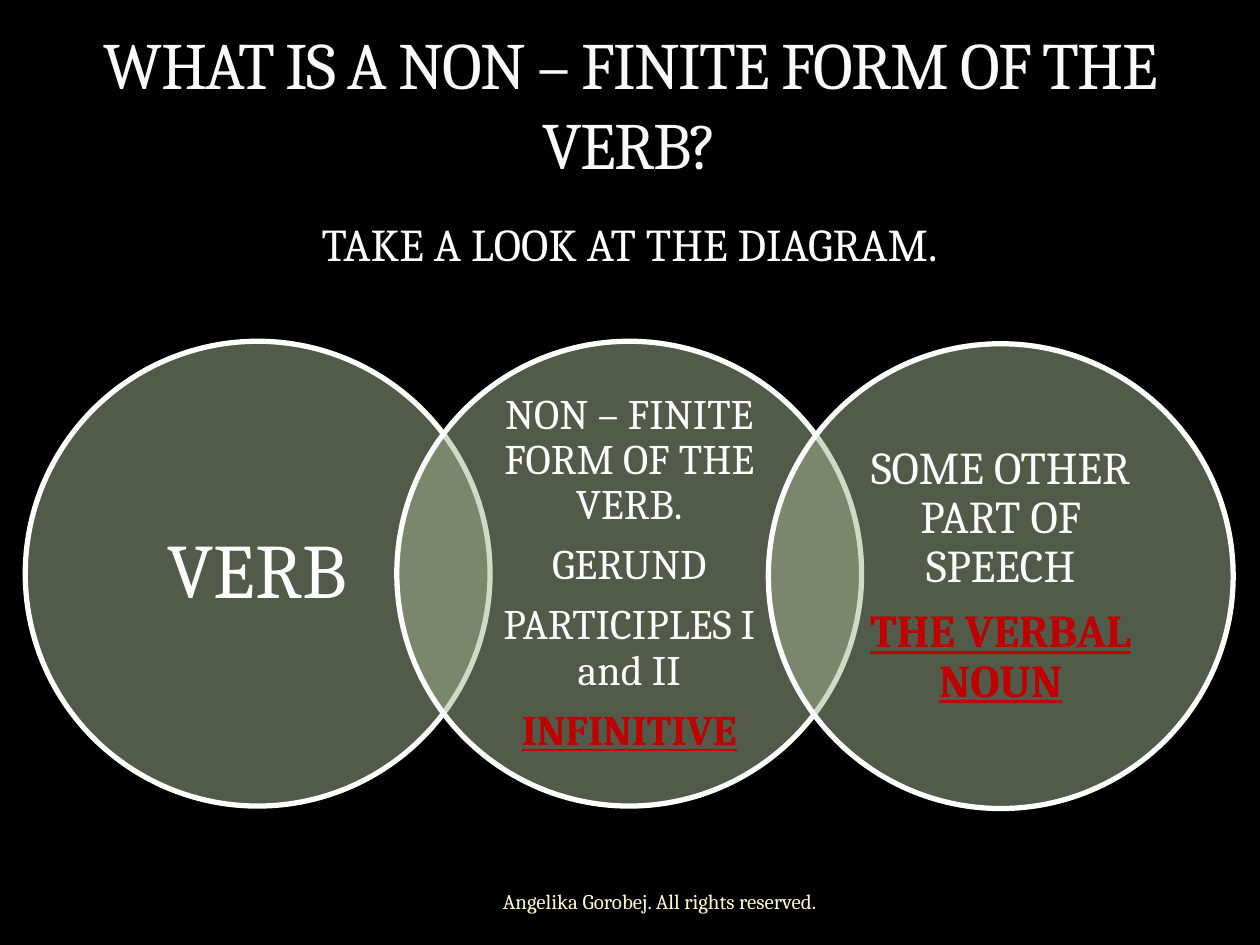
from lxml.etree import SubElement
from pptx import Presentation
from pptx.dml.color import RGBColor
from pptx.enum.shapes import MSO_SHAPE as Preset
from pptx.enum.text import MSO_ANCHOR as Anchor, MSO_AUTO_SIZE as AutoSize, PP_ALIGN as Align
from pptx.oxml.ns import qn
from pptx.util import Cm, Pt

FACE = "Cambria"
WHITE, CREAM, RED, OLIVE = "FFFFFF", "FEFAC9", "C00000", "A5B592"
EMPHASIS = {"bold": True, "underline": True}
DIAMETER, STEP = 9.37, 7.49
CIRCLES = [
    {"top": 6.88, "size": 44, "padding": 0.15, "lines": ["VERB"], "highlight": None},
    {"top": 6.88, "size": 24, "padding": 0.08, "highlight": "INFINITIVE",
     "lines": ["NON – FINITE FORM OF THE VERB.", "GERUND", "PARTICIPLES I and II"]},
    {"top": 6.93, "size": 26, "padding": 0.1, "highlight": "THE VERBAL NOUN",
     "lines": ["SOME OTHER PART OF SPEECH"]},
]


def colour(code):
    return RGBColor.from_string(code)


def apply(target, values):
    for name, value in values.items():
        setattr(target, name, value)


def write(paragraph, words, size, ink, font_format=None, **layout):
    run = paragraph.add_run()
    run.text = words
    apply(run.font, {"name": FACE, "size": Pt(size), **(font_format or {})})
    run.font.color.rgb = colour(ink)
    apply(paragraph, layout)
    return run


def text_frame(slide, box, **values):
    frame = slide.shapes.add_textbox(*map(Cm, box)).text_frame
    apply(frame, {"word_wrap": True, **values})
    return frame


def place_title(slide, box):
    title = slide.shapes.title
    apply(title, dict(zip(("left", "top", "width", "height"), map(Cm, box))))
    frame = title.text_frame
    apply(frame, {"word_wrap": True, "auto_size": AutoSize.NONE,
                  "vertical_anchor": Anchor.BOTTOM})
    run = write(frame.paragraphs[0], "WHAT IS A NON – FINITE FORM OF THE VERB?",
                37.8, "F9F9F9", alignment=Align.CENTER)
    run.font._element.set("spc", "-100")


def place_prompt(slide, box):
    frame = text_frame(slide, box)
    write(frame.paragraphs[0], "TAKE A LOOK AT THE DIAGRAM.", 26, WHITE,
          alignment=Align.CENTER, space_before=Pt(6))


def place_footer(slide, box):
    frame = text_frame(slide, box, vertical_anchor=Anchor.MIDDLE)
    write(frame.paragraphs[0], "Angelika Gorobej. All rights reserved.", 12, CREAM,
          alignment=Align.RIGHT)


def place_circle(slide, left, top, size, padding, lines, highlight):
    circle = slide.shapes.add_shape(Preset.OVAL, *map(Cm, (left, top, DIAMETER, DIAMETER)))
    circle.shadow.inherit = False
    circle.fill.solid()
    circle.fill.fore_color.rgb = colour(OLIVE)
    tint = circle._element.spPr.find(qn("a:solidFill"))[0]
    SubElement(tint, qn("a:alpha"), val="50000")
    circle.line.color.rgb = colour(WHITE)
    circle.line.width = Pt(3)

    inset, side = 1.37, 6.63
    frame = text_frame(slide, (left + inset, top + inset, side, side),
                       vertical_anchor=Anchor.MIDDLE,
                       margin_left=Cm(0.5), margin_right=Cm(0.5),
                       margin_top=Cm(padding), margin_bottom=Cm(padding))
    entries = [(line, WHITE, None) for line in lines]
    if highlight:
        entries.append((highlight, RED, EMPHASIS))
    for index, (words, ink, font_format) in enumerate(entries):
        paragraph = frame.add_paragraph() if index else frame.paragraphs[0]
        write(paragraph, words, size, ink, font_format, alignment=Align.CENTER,
              line_spacing=0.9, space_after=Pt(round(size * 0.35, 1)))


def place_diagram(slide, left):
    for index, circle in enumerate(CIRCLES):
        place_circle(slide, left + index * STEP, **circle)


def main():
    deck = Presentation()
    apply(deck, {"slide_width": Cm(25.4), "slide_height": Cm(19.05)})
    slide = deck.slides.add_slide(deck.slide_layouts[5])
    slide.background.fill.solid()
    slide.background.fill.fore_color.rgb = colour("000000")
    place_title(slide, (1.27, 0.43, 22.86, 3.38))
    place_prompt(slide, (1.27, 4.24, 22.86, 1.6))
    place_footer(slide, (5.89, 17.65, 10.82, 1.02))
    place_diagram(slide, 0.51)
    deck.save("out.pptx")


if __name__ == "__main__":
    main()
